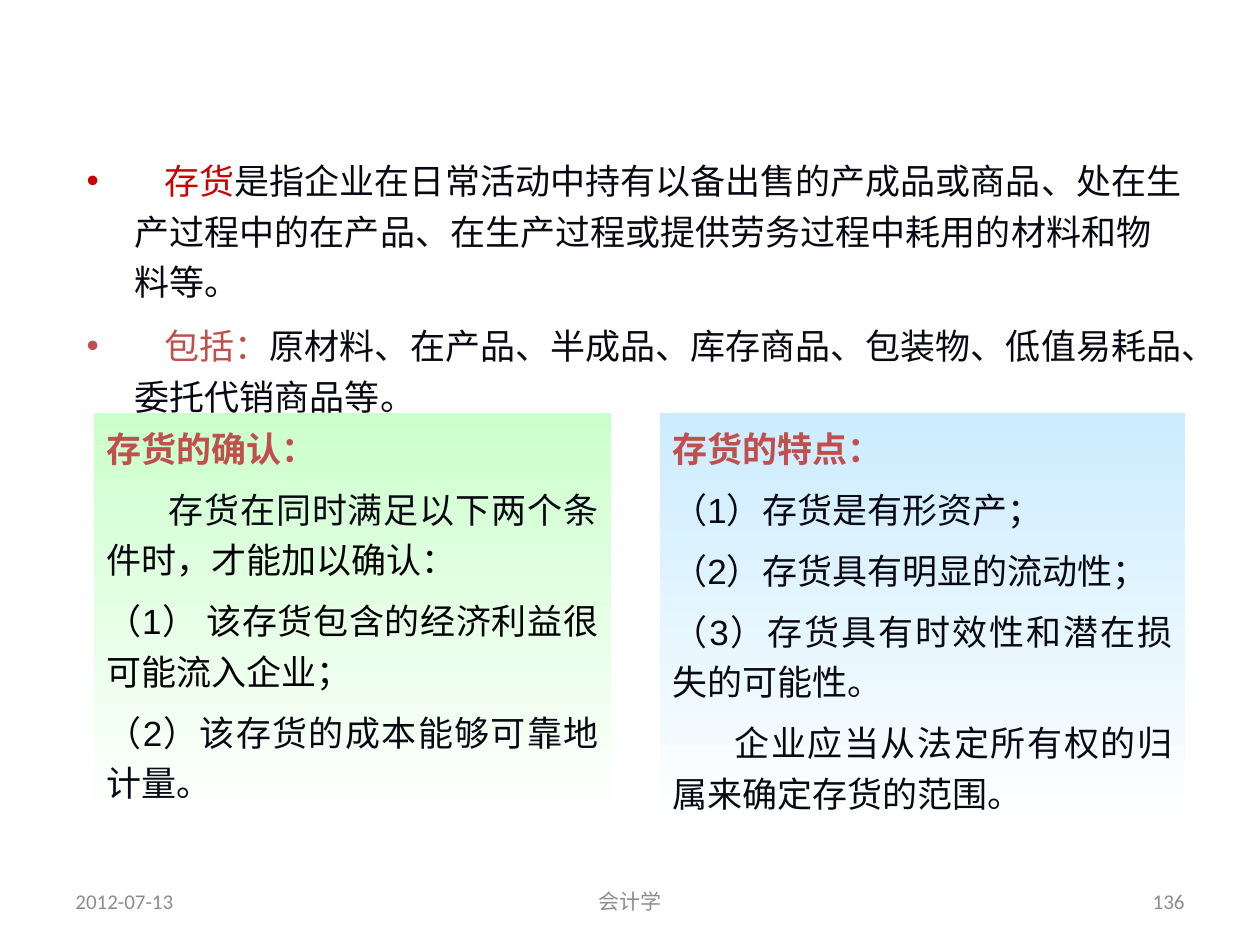
import lxml.etree
import pptx
import pptx.util
import pptx.dml.color
import pptx.enum.shapes
import pptx.enum.text
import pptx.oxml.ns

INK = {"red": "CC0000", "rose": "C0504D", "dark": "080912", "black": "000000",
       "gray": "8C8C8C", "green": "CCFFCC", "blue": "CCECFF", "white": "FFFFFF"}
SANS = "Noto Sans CJK SC"

INTRO = [
    [("\t存货", "red"),
     ("是指企业在日常活动中持有以备出售的产成品或商品、处在生产过程中的在产品、"
      "在生产过程或提供劳务过程中耗用的材料和物料等。", "dark")],
    [("\t包括：", "rose"),
     ("原材料、在产品、半成品、库存商品、包装物、低值易耗品、委托代销商品等。", "dark")],
]
PANELS = [
    {"at": (94, 413, 517, 403), "fill": "green", "head": "存货的确认：", "rows": [
        (62, [("存货在同时满足以下两个条件", "dark"), ("时，才能加以确认：", "black")]),
        (0, [("（1） 该存货包含的经济利益很可能流入企业；", "black")]),
        (0, [("（2）该存货的成本能够可靠地计量。", "dark")])]},
    {"at": (660, 413, 525, 416), "fill": "blue", "head": "存货的特点：", "rows": [
        (0, [("（1）存货是有形资产；", "dark")]),
        (0, [("（2）存货具有明显的流动性；", "dark")]),
        (0, [("（3）存货具有时效性和潜在损失的可能性。", "dark")]),
        (62, [("企业应当从法定所有权的归属来确定存货的范围。", "dark")])]},
]
FOOT = [("2012-07-13", 63, 294, "LEFT"), ("会计学", 431, 399, "CENTER"),
        ("136", 903, 294, "RIGHT")]
HANG, GAP = 48, 30

ALIGN = pptx.enum.text.PP_ALIGN
FIT = pptx.enum.text.MSO_AUTO_SIZE


def px(n):
    return pptx.util.Emu(round(n * 914400 / 126))


def tint(name):
    return pptx.dml.color.RGBColor.from_string(INK[name])


def node(root, tag, **attrs):
    item = lxml.etree.SubElement(root, pptx.oxml.ns.qn(tag))
    for key, val in attrs.items():
        item.set(key, str(val))
    return item


def write(para, text, ink, face, size=20, bold=False):
    run = para.add_run()
    run.text = text
    font = run.font
    font.size = pptx.util.Pt(size)
    font.bold = bold
    font.color.rgb = tint(ink)
    font.name = face
    node(font._element, "a:ea", typeface=SANS)


def line(frame, index, before):
    para = frame.add_paragraph() if index else frame.paragraphs[0]
    para.line_spacing = 1.2
    para.space_before = pptx.util.Pt(before if index else 0)
    return para


def bullet(para):
    props = para._p.get_or_add_pPr()
    props.set("marL", str(px(HANG)))
    props.set("indent", str(-px(HANG)))
    return props


def intro(slide):
    body = slide.placeholders[1]
    body.left, body.top, body.width, body.height = map(px, (74, 145, 1121, 287))
    frame = body.text_frame
    frame.auto_size = FIT.NONE
    for i, runs in enumerate(INTRO):
        para = line(frame, i, 8)
        props = bullet(para)
        node(node(props, "a:buClr"), "a:srgbClr", val=INK[runs[0][1]])
        node(props, "a:buFont", typeface="Arial")
        node(props, "a:buChar", char="•")
        tabs = node(props, "a:tabLst")
        for stop in (GAP, HANG + GAP):
            node(tabs, "a:tab", pos=px(stop), algn="l")
        for text, ink in runs:
            write(para, text, ink, SANS)


def panel(slide, data):
    kind = pptx.enum.shapes.MSO_SHAPE.RECTANGLE
    box = slide.shapes.add_shape(kind, *map(px, data["at"]))
    box.shadow.inherit = False
    box.line.fill.background()
    box.fill.gradient()
    box.fill.gradient_angle = 270
    for stop, ink, pos in zip(box.fill.gradient_stops, (data["fill"], "white"), (0, 1)):
        stop.color.rgb = tint(ink)
        stop.position = pos
    frame = box.text_frame
    frame.word_wrap = True
    frame.auto_size = FIT.SHAPE_TO_FIT_TEXT
    frame.vertical_anchor = pptx.enum.text.MSO_ANCHOR.TOP
    rows = [(0, [(data["head"], "rose")])] + data["rows"]
    for i, (inset, runs) in enumerate(rows):
        para = line(frame, i, 6)
        para.alignment = ALIGN.JUSTIFY
        para._p.get_or_add_pPr().set("indent", str(px(inset)))
        for text, ink in runs:
            write(para, text, ink, "Arial", bold=i == 0)


def foot(slide, text, left, width, side):
    frame = slide.shapes.add_textbox(*map(px, (left, 876, width, 50))).text_frame
    frame.word_wrap = True
    frame.vertical_anchor = pptx.enum.text.MSO_ANCHOR.MIDDLE
    para = frame.paragraphs[0]
    para.alignment = ALIGN[side]
    write(para, text, "gray", "Calibri", size=12)


def main():
    deck = pptx.Presentation()
    deck.slide_width, deck.slide_height = px(1260), px(945)
    slide = deck.slides.add_slide(deck.slide_layouts[1])
    title = slide.shapes.title._element
    title.getparent().remove(title)
    intro(slide)
    for item in FOOT:
        foot(slide, *item)
    for data in PANELS:
        panel(slide, data)
    deck.save("out.pptx")


if __name__ == "__main__":
    main()
